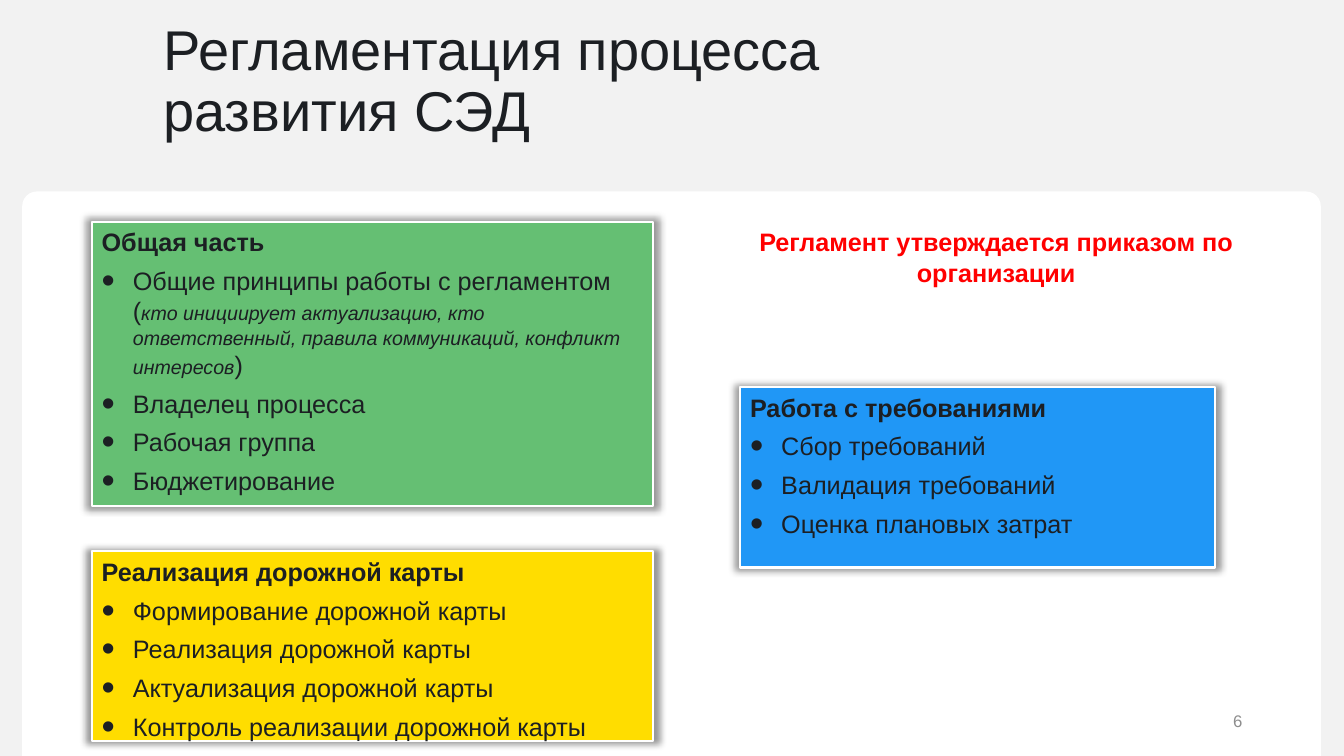
from lxml import etree
from pptx import Presentation
from pptx import util as u
from pptx.dml.color import RGBColor
from pptx.enum import shapes, text
from pptx.oxml.ns import qn

FONT = "Arial"
COLOURS = {
    "background": "F2F2F2", "white": "FFFFFF", "ink": "1C1F23",
    "blue": "2097F6", "green": "65BF73", "yellow": "FFDD00",
    "red": "FF0000", "grey": "8D8D8D", "shadow": "000000",
}


def colour(name):
    return RGBColor.from_string(COLOURS[name])


def place(box):
    return [u.Inches(length) for length in box]


def add_run(paragraph, words, size=18, ink="ink", bold=False, italic=False):
    run = paragraph.add_run()
    run.text = words
    run.font.name = FONT
    run.font.size = u.Pt(size)
    run.font.bold = bold
    run.font.italic = italic
    run.font.color.rgb = colour(ink)


def add_bullet(paragraph):
    properties = paragraph._p.get_or_add_pPr()
    properties.set("marL", str(u.Inches(0.31)))
    properties.set("indent", str(-u.Inches(0.31)))
    etree.SubElement(properties, qn("a:buSzPct"), val="150000")
    etree.SubElement(properties, qn("a:buFont"), typeface=FONT)
    etree.SubElement(properties, qn("a:buChar"), char="•")


def add_soft_shadow(shape):
    """Slightly enlarged, blurred shadow behind the shape."""
    effects = shape._element.spPr.find(qn("a:effectLst"))
    shadow = etree.SubElement(
        effects, qn("a:outerShdw"), blurRad=str(u.Pt(5)), sx="102000",
        sy="102000", algn="ctr", rotWithShape="0")
    shade = etree.SubElement(shadow, qn("a:srgbClr"), val=COLOURS["shadow"])
    etree.SubElement(shade, qn("a:alpha"), val="40000")


def add_panel(slide):
    panel = slide.shapes.add_shape(
        shapes.MSO_SHAPE.ROUND_2_SAME_RECTANGLE, *place((0.22, 1.9, 12.88, 5.6)))
    panel.adjustments[0] = 0.026
    panel.adjustments[1] = 0
    panel.shadow.inherit = False
    panel.fill.solid()
    panel.fill.fore_color.rgb = colour("white")
    panel.line.fill.background()


def add_card(slide, box, fill, heading, items):
    """Each item is a list of (words, run options)."""
    card = slide.shapes.add_shape(shapes.MSO_SHAPE.RECTANGLE, *place(box))
    card.shadow.inherit = False
    card.fill.solid()
    card.fill.fore_color.rgb = colour(fill)
    card.line.color.rgb = colour("white")
    card.line.width = u.Pt(1.5)
    add_soft_shadow(card)
    frame = card.text_frame
    frame.word_wrap = True
    frame.vertical_anchor = text.MSO_ANCHOR.TOP
    paragraph = frame.paragraphs[0]
    paragraph.alignment = text.PP_ALIGN.LEFT
    add_run(paragraph, heading, bold=True)
    for item in items:
        paragraph = frame.add_paragraph()
        paragraph.alignment = text.PP_ALIGN.LEFT
        paragraph.space_before = u.Pt(6)
        add_bullet(paragraph)
        for words, options in item:
            add_run(paragraph, words, **options)


def add_label(slide, box, words, align="LEFT", anchor="MIDDLE", spacing=None,
              **options):
    frame = slide.shapes.add_textbox(*place(box)).text_frame
    frame.word_wrap = True
    frame.vertical_anchor = text.MSO_ANCHOR[anchor]
    paragraph = frame.paragraphs[0]
    paragraph.alignment = text.PP_ALIGN[align]
    paragraph.line_spacing = spacing
    add_run(paragraph, words, **options)


def plain(*lines):
    return [[(line, {})] for line in lines]


def main():
    presentation = Presentation()
    presentation.slide_width = u.Inches(13.33)
    presentation.slide_height = u.Inches(7.5)
    slide = presentation.slides.add_slide(presentation.slide_layouts[6])
    slide.background.fill.solid()
    slide.background.fill.fore_color.rgb = colour("background")

    add_panel(slide)
    add_card(slide, (7.34, 3.84, 4.71, 1.79), "blue", "Работа с требованиями",
             plain("Сбор требований", "Валидация требований",
                   "Оценка плановых затрат"))
    principles = [
        ("Общие принципы работы с регламентом (", {}),
        ("кто инициирует актуализацию, кто ответственный, правила "
         "коммуникаций, конфликт интересов", {"size": 14, "italic": True}),
        (")", {}),
    ]
    add_card(slide, (0.91, 2.2, 5.57, 2.82), "green", "Общая часть",
             [principles] + plain("Владелец процесса", "Рабочая группа",
                                  "Бюджетирование"))
    add_label(slide, (1.52, 0.35, 9.02, 0.94),
              "Регламентация процесса развития СЭД", spacing=0.9, size=40)
    add_card(slide, (0.91, 5.47, 5.57, 1.88), "yellow",
             "Реализация дорожной карты",
             plain("Формирование дорожной карты", "Реализация дорожной карты",
                   "Актуализация дорожной карты",
                   "Контроль реализации дорожной карты"))
    add_label(slide, (9.42, 6.95, 3, 0.4), "6", align="RIGHT", size=12,
              ink="grey")
    add_label(slide, (7.34, 2.2, 5.08, 0.71),
              "Регламент утверждается приказом по организации",
              align="CENTER", anchor="TOP", ink="red", bold=True)
    presentation.save("out.pptx")


if __name__ == "__main__":
    main()
